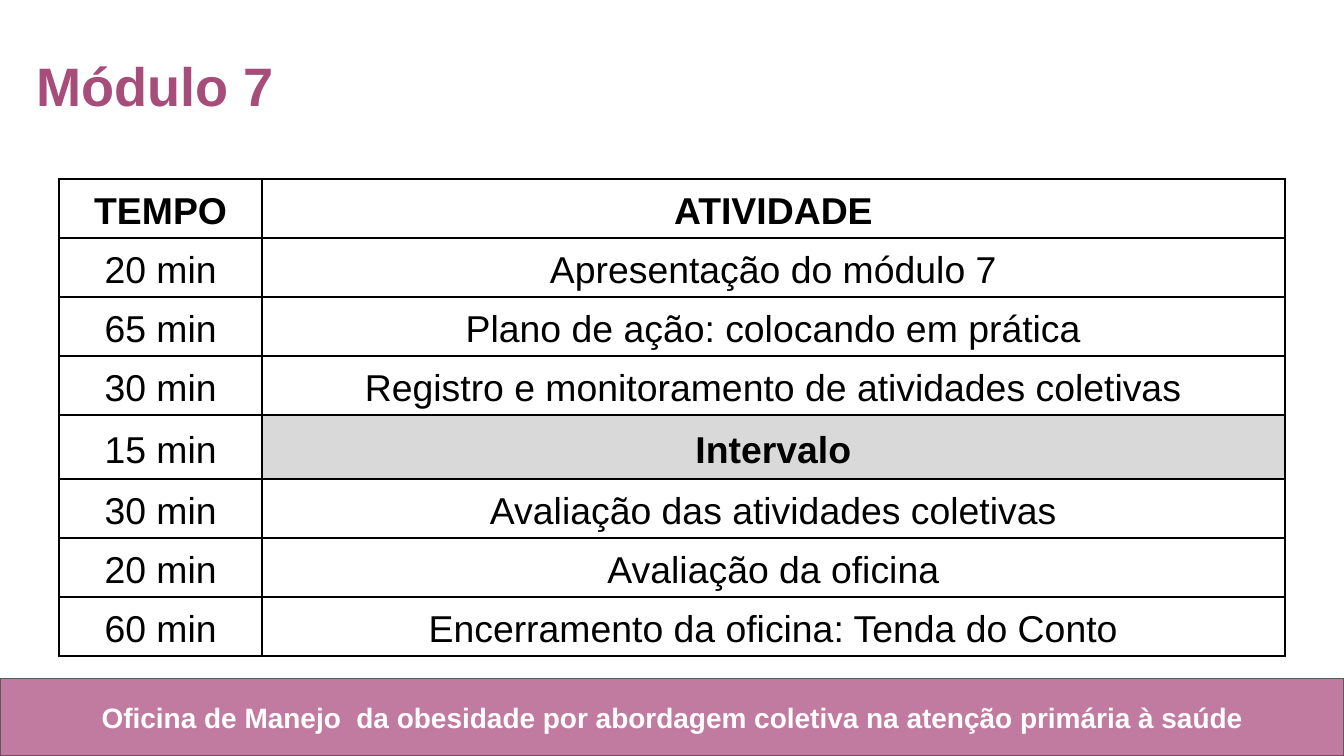
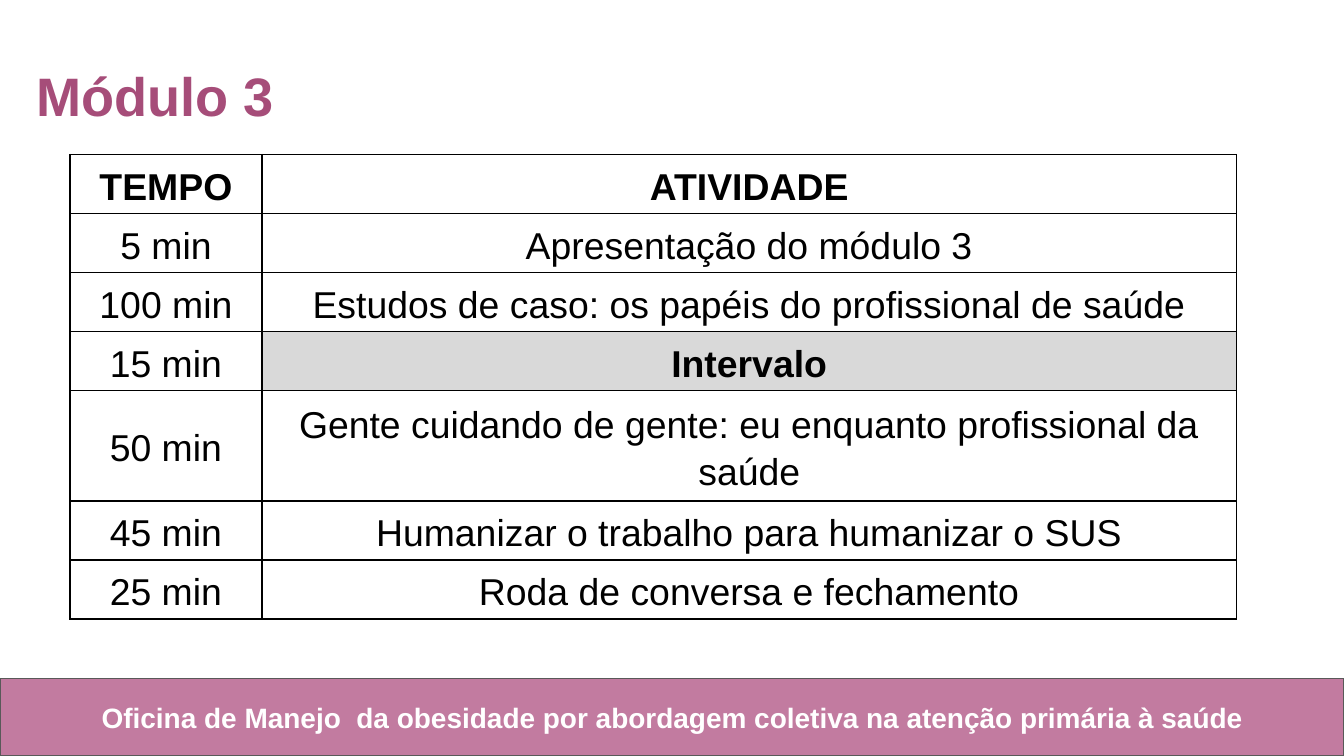
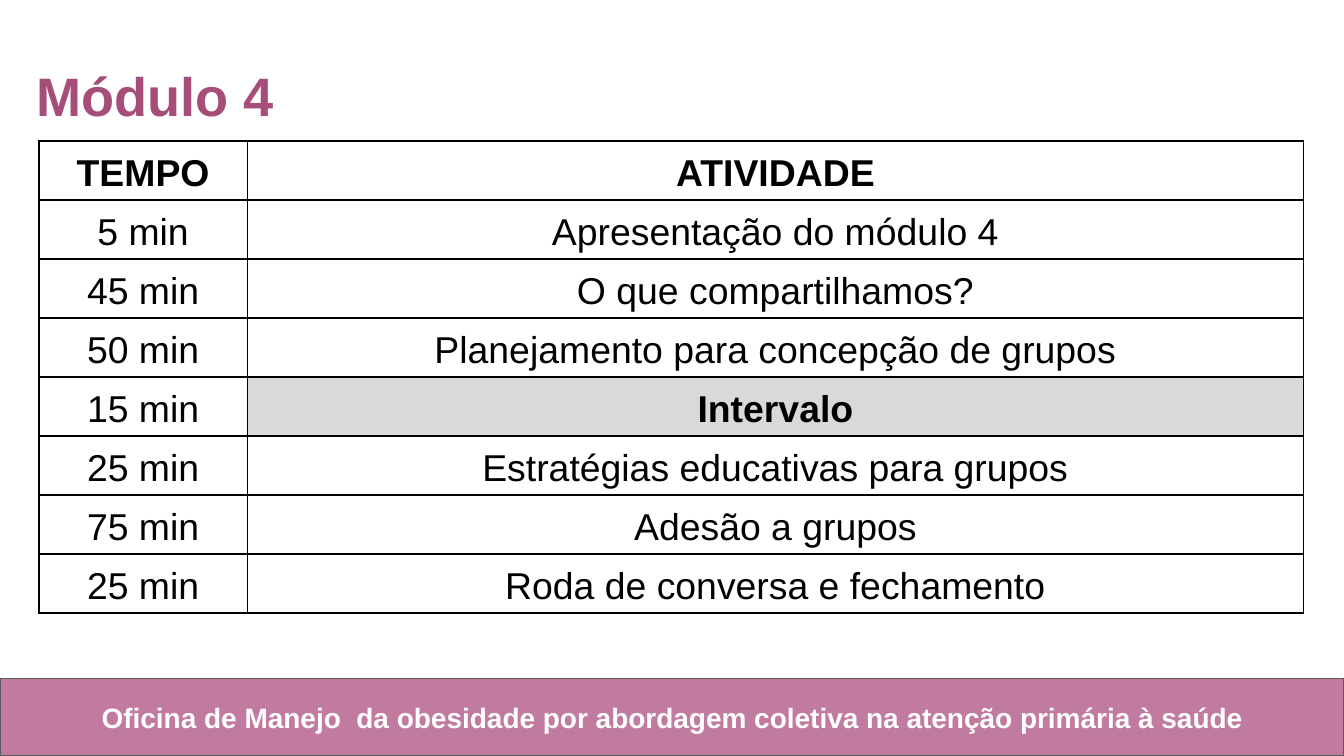
from dataclasses import dataclass

import lxml.etree
import pptx
import pptx.dml.color
import pptx.enum.shapes
import pptx.enum.text
import pptx.oxml.ns
import pptx.presentation
import pptx.slide
import pptx.table
import pptx.text.text
import pptx.util
from pptx.util import Inches

# Shared style
COLORS = {
    "title": "A64D79",
    "band": "C27BA0",
    "band_line": "595959",
    "band_text": "FFFFFF",
    "text": "000000",
    "border": "000000",
    "break": "D9D9D9",
}
FONT = "Arial"
FOOTER = "Oficina de Manejo  da obesidade por abordagem coletiva na atenção primária à saúde"
HEADER = ("TEMPO", "ATIVIDADE")
BREAK = "Intervalo"
LINE_SPACING = 1.15
CELL_MARGIN = pptx.util.Pt(2)
BLANK_LAYOUT = 6


@dataclass
class Module:
    """One agenda slide; lengths are in inches, row heights are minimums."""
    number: int
    title_top: float
    left: float
    top: float
    widths: tuple[float, float]
    row_height: float
    tall_rows: dict[int, float]
    activities: list[tuple[str, str]]


MODULES = [
    Module(7, 0.22, 0.44, 1.33, (1.51, 7.61), 0.27, {0: 0.32, 3: 0.32, 4: 0.48}, [
        ("20 min", "Apresentação do módulo 7"),
        ("65 min", "Plano de ação: colocando em prática"),
        ("30 min", "Registro e monitoramento de atividades coletivas"),
        ("15 min", BREAK),
        ("30 min", "Avaliação das atividades coletivas"),
        ("20 min", "Avaliação da oficina"),
        ("60 min", "Encerramento da oficina: Tenda do Conto"),
    ]),
    Module(3, 0.29, 0.52, 1.15, (1.43, 7.25), 0.27, {0: 0.32, 3: 0.32, 4: 0.48}, [
        ("5 min", "Apresentação do módulo 3"),
        ("100 min", "Estudos de caso: os papéis do profissional de saúde"),
        ("15 min", BREAK),
        ("50 min", "Gente cuidando de gente: eu enquanto profissional da saúde"),
        ("45 min", "Humanizar o trabalho para humanizar o SUS"),
        ("25 min", "Roda de conversa e fechamento"),
    ]),
    Module(4, 0.29, 0.29, 1.05, (1.55, 7.86), 0.21, {0: 0.25, 4: 0.25}, [
        ("5 min", "Apresentação do módulo 4"),
        ("45 min", "O que compartilhamos?"),
        ("50 min", "Planejamento para concepção de grupos"),
        ("15 min", BREAK),
        ("25 min", "Estratégias educativas para grupos"),
        ("75 min", "Adesão a grupos"),
        ("25 min", "Roda de conversa e fechamento"),
    ]),
]


def rgb(name: str) -> pptx.dml.color.RGBColor:
    return pptx.dml.color.RGBColor.from_string(COLORS[name])


def write(tf: pptx.text.text.TextFrame, text: str, size: int, color: str,
          bold: bool = True, centered: bool = False,
          spacing: float | None = None) -> None:
    tf.text = text
    p = tf.paragraphs[0]
    p.alignment = (pptx.enum.text.PP_ALIGN.CENTER if centered
                   else pptx.enum.text.PP_ALIGN.LEFT)
    if spacing:
        p.line_spacing = spacing
    for r in p.runs:
        r.font.name = FONT
        r.font.size = pptx.util.Pt(size)
        r.font.bold = bold
        r.font.color.rgb = rgb(color)


def add_textbox(slide: pptx.slide.Slide, left: float, top: float,
                width: float, height: float) -> pptx.text.text.TextFrame:
    sp = slide.shapes.add_textbox(Inches(left), Inches(top), Inches(width), Inches(height))
    tf = sp.text_frame
    tf.word_wrap = True
    tf.margin_left = tf.margin_right = tf.margin_top = tf.margin_bottom = Inches(0.1)
    return tf


def add_footer(slide: pptx.slide.Slide) -> None:
    band = slide.shapes.add_shape(pptx.enum.shapes.MSO_SHAPE.RECTANGLE,
                                  Inches(0), Inches(5.05), Inches(10), Inches(0.57))
    band.shadow.inherit = False
    band.fill.solid()
    band.fill.fore_color.rgb = rgb("band")
    band.line.color.rgb = rgb("band_line")
    band.line.width = pptx.util.Pt(0.75)
    tf = add_textbox(slide, 0.34, 5.11, 9.33, 0.45)
    tf.auto_size = pptx.enum.text.MSO_AUTO_SIZE.SHAPE_TO_FIT_TEXT
    write(tf, FOOTER, 15, "band_text", centered=True)


def add_borders(cell: pptx.table._Cell) -> None:
    qn = pptx.oxml.ns.qn
    tcPr = cell._tc.get_or_add_tcPr()
    # Borders come before the fill
    for i, side in enumerate(("a:lnL", "a:lnR", "a:lnT", "a:lnB")):
        ln = lxml.etree.Element(qn(side), w=str(pptx.util.Pt(1)))
        fill = lxml.etree.SubElement(ln, qn("a:solidFill"))
        lxml.etree.SubElement(fill, qn("a:srgbClr"), val=COLORS["border"])
        tcPr.insert(i, ln)


def fill_cell(cell: pptx.table._Cell, text: str, bold: bool) -> None:
    cell.vertical_anchor = pptx.enum.text.MSO_ANCHOR.MIDDLE
    cell.margin_left = cell.margin_right = CELL_MARGIN
    cell.margin_top = cell.margin_bottom = CELL_MARGIN
    if text == BREAK:
        cell.fill.solid()
        cell.fill.fore_color.rgb = rgb("break")
    else:
        cell.fill.background()
    write(cell.text_frame, text, 20, "text", bold, centered=True, spacing=LINE_SPACING)
    add_borders(cell)


def add_agenda(slide: pptx.slide.Slide, module: Module) -> None:
    rows = [HEADER, *module.activities]
    heights = [module.tall_rows.get(i, module.row_height) for i in range(len(rows))]
    table = slide.shapes.add_table(
        len(rows), len(HEADER), Inches(module.left), Inches(module.top),
        Inches(sum(module.widths)), Inches(sum(heights))).table
    table.first_row = table.horz_banding = False
    for column, width in zip(table.columns, module.widths):
        column.width = Inches(width)
    for i, (row, height) in enumerate(zip(rows, heights)):
        table.rows[i].height = Inches(height)
        for j, text in enumerate(row):
            fill_cell(table.cell(i, j), text, bold=i == 0 or text == BREAK)


def add_module(prs: pptx.presentation.Presentation, module: Module) -> None:
    slide = prs.slides.add_slide(prs.slide_layouts[BLANK_LAYOUT])
    add_footer(slide)
    write(add_textbox(slide, 0.17, module.title_top, 7.57, 0.74),
          f"Módulo {module.number}", 29, "title", spacing=LINE_SPACING)
    add_agenda(slide, module)


def main() -> None:
    prs = pptx.Presentation()
    # Widescreen, 16:9
    prs.slide_width = Inches(10)
    prs.slide_height = prs.slide_width * 9 // 16
    for module in MODULES:
        add_module(prs, module)
    prs.save("out.pptx")


if __name__ == "__main__":
    main()
